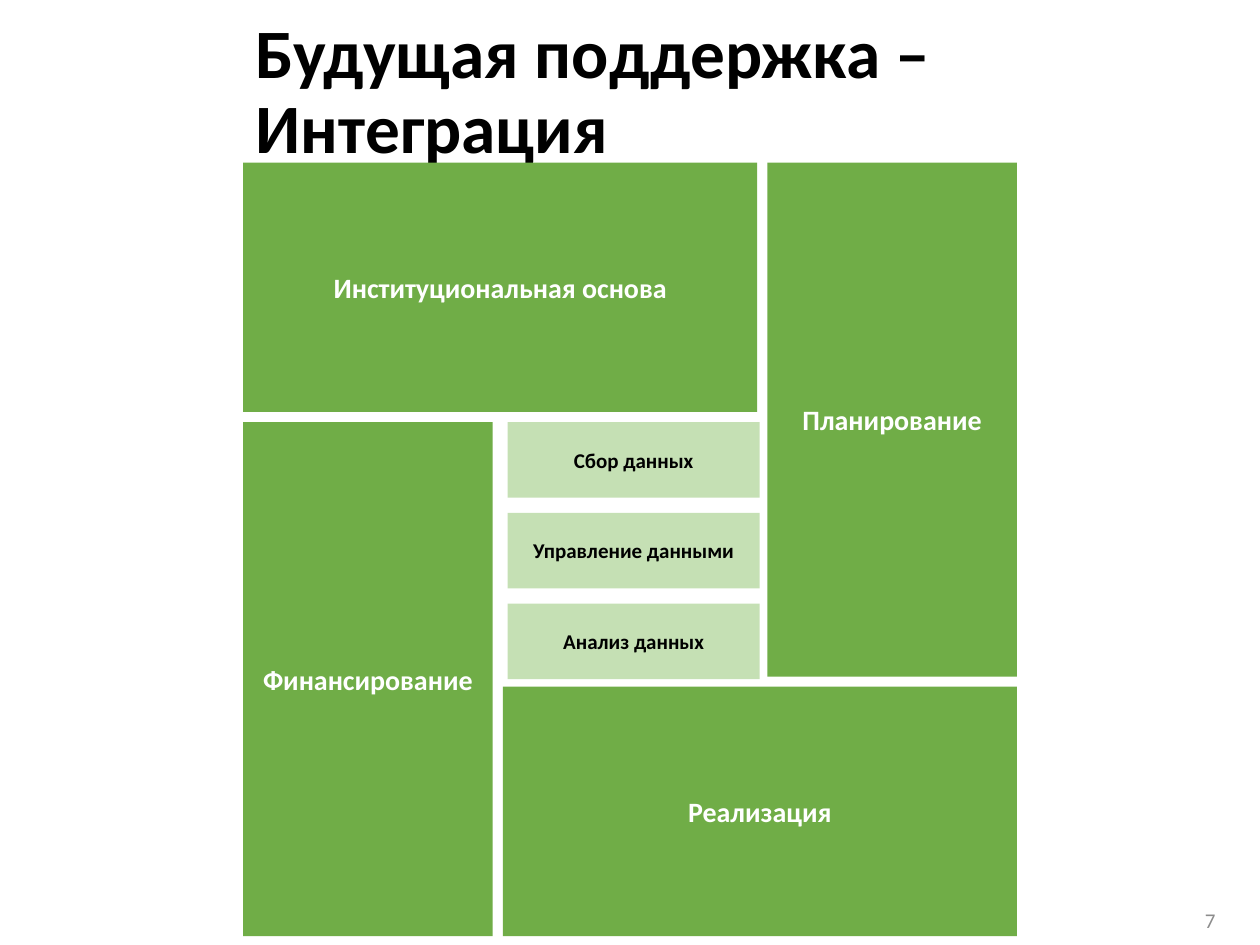
from pptx import Presentation
from pptx.dml.color import RGBColor
from pptx.enum.shapes import MSO_SHAPE
from pptx.enum.text import MSO_ANCHOR, MSO_AUTO_SIZE, PP_ALIGN
from pptx.util import Inches, Pt

# Pinwheel: a square with one long and one short side per block
LEFT, TOP, SIDE = 1.93, 1.29, 6.14
LONG, SHORT = 4.08, 1.98
FAR = SIDE - LONG
END = SIDE - SHORT

# Label, column and row offset, width, height
BLOCKS = [
    ("Институциональная основа", 0, 0, LONG, SHORT),
    ("Реализация", FAR, END, LONG, SHORT),
    ("Финансирование", 0, FAR, SHORT, LONG),
    ("Планирование", END, 0, SHORT, LONG),
]
STEPS = ["Сбор данных", "Управление данными", "Анализ данных"]


def color(code):
    return RGBColor.from_string(code)


def place(shape, left, top, width, height):
    spots = {"left": left, "top": top, "width": width, "height": height}
    for name, value in spots.items():
        setattr(shape, name, Inches(value))


def write(shape, text, size, code, bold=True, align=PP_ALIGN.CENTER):
    frame = shape.text_frame
    frame.text = text
    look = {"word_wrap": True, "auto_size": MSO_AUTO_SIZE.NONE,
            "vertical_anchor": MSO_ANCHOR.MIDDLE}
    for name, value in look.items():
        setattr(frame, name, value)
    para = frame.paragraphs[0]
    para.alignment = align
    font = para.runs[0].font
    style = {"name": "Calibri", "size": Pt(size), "bold": bold}
    for name, value in style.items():
        setattr(font, name, value)
    font.color.rgb = color(code)
    return para


def block(slide, text, spot, fill, size, code):
    shape = slide.shapes.add_shape(
        MSO_SHAPE.RECTANGLE, *(Inches(value) for value in spot))
    shape.shadow.inherit = False
    shape.fill.solid()
    shape.fill.fore_color.rgb = color(fill)
    shape.line.fill.background()
    write(shape, text, size, code)
    return shape


def main():
    deck = Presentation()
    deck.slide_width, deck.slide_height = Inches(10), Inches(7.5)
    slide = deck.slides.add_slide(deck.slide_layouts[5])

    # Title
    title = slide.shapes.title
    place(title, LEFT, 0.4, 8.07, 0.69)
    para = write(title, "Будущая поддержка – Интеграция", 39.6, "000000",
                 align=PP_ALIGN.LEFT)
    para.line_spacing = 0.9

    # Four outer blocks
    for text, col, row, width, height in BLOCKS:
        spot = (LEFT + col, TOP + row, width, height)
        block(slide, text, spot, "70AD47", 16, "FFFFFF")

    # Data steps in the centre
    for row, text in enumerate(STEPS):
        spot = (4.03, 3.35 + row * 0.72, 2, 0.6)
        step = block(slide, text, spot, "C5E0B4", 12, "000000")
        step.text_frame.margin_left = step.text_frame.margin_right = 0

    # Slide number
    page = slide.shapes.add_textbox(0, 0, 0, 0)
    place(page, 9.21, 7.11, 0.79, 0.39)
    write(page, "7", 12, "8C8C8C", bold=False)

    deck.save("out.pptx")


if __name__ == "__main__":
    main()
